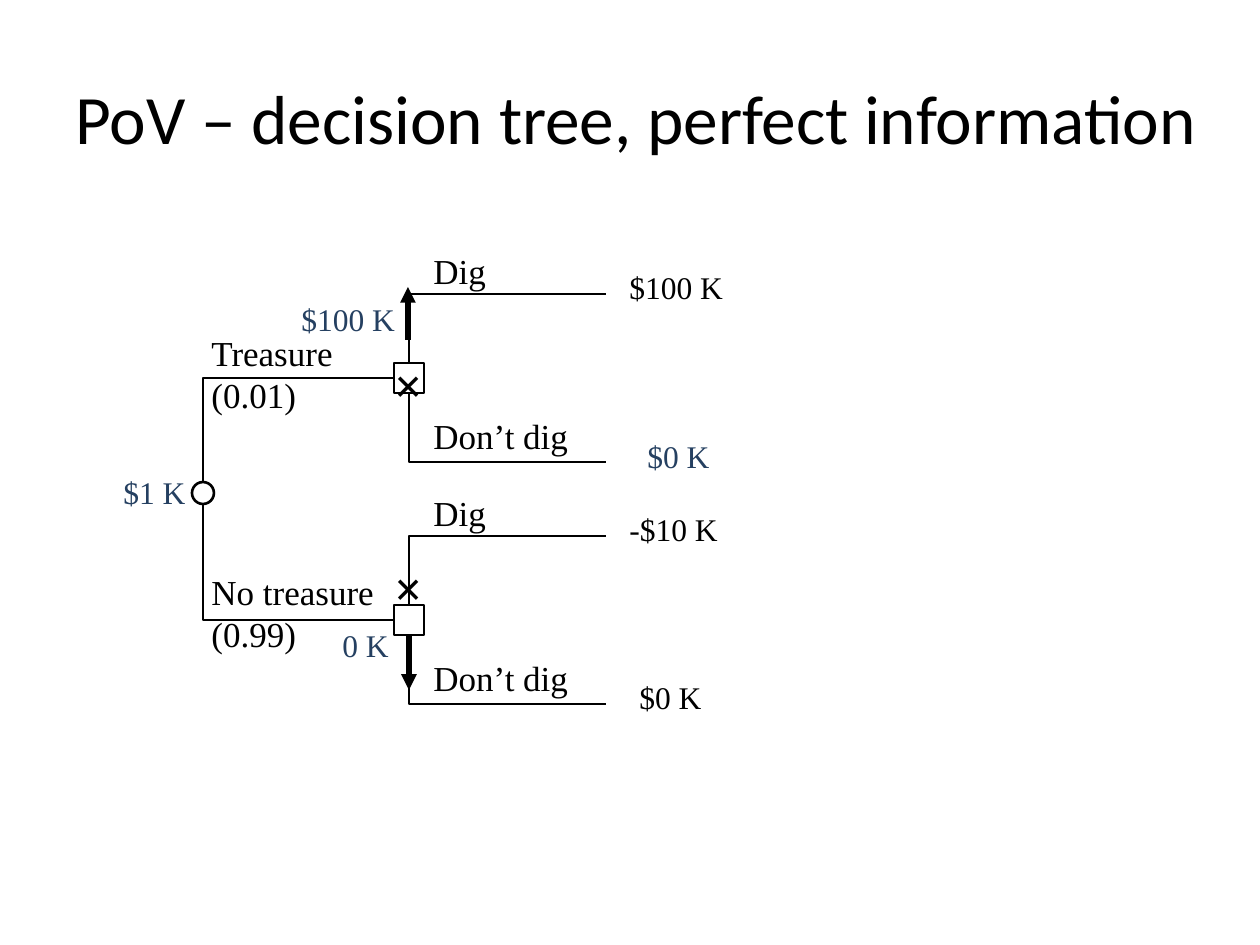
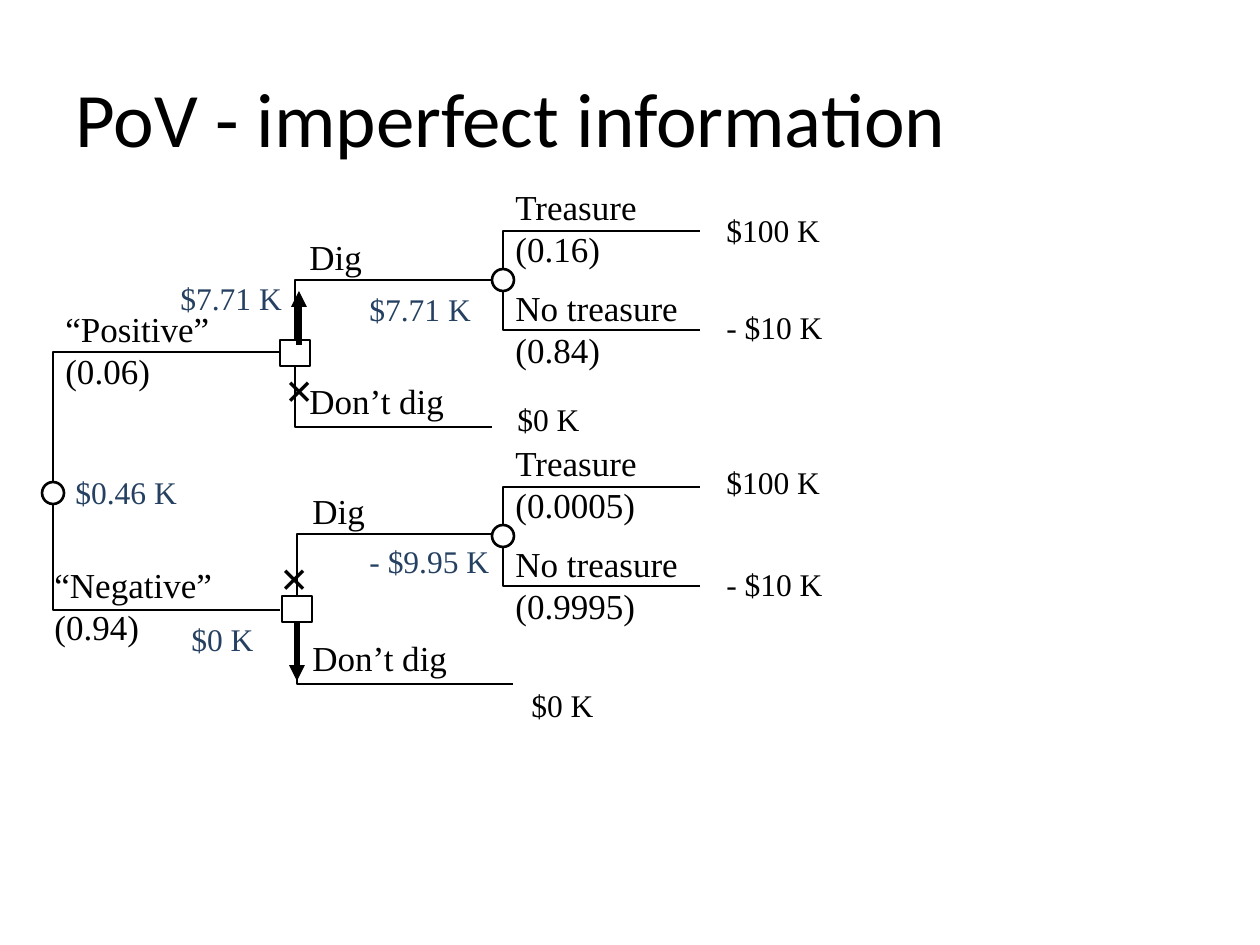
from dataclasses import dataclass
from typing import Optional

from lxml.etree import SubElement
from pptx import Presentation
from pptx.dml.color import RGBColor
from pptx.enum.shapes import MSO_CONNECTOR, MSO_SHAPE
from pptx.enum.text import MSO_ANCHOR, MSO_AUTO_SIZE, PP_ALIGN
from pptx.oxml.ns import qn
from pptx.util import Emu, Inches, Pt

BLACK = RGBColor(0x00, 0x00, 0x00)
WHITE = RGBColor(0xFF, 0xFF, 0xFF)
NAVY = RGBColor(0x25, 0x40, 0x61)
SERIF, SANS = "Times New Roman", "Calibri"
SQUARE, CIRCLE = MSO_SHAPE.RECTANGLE, MSO_SHAPE.OVAL
SCALE = Inches(1) / 126  # EMU in one px


@dataclass
class Fork:
    """Two branches leaving a node, each with its label."""
    spine: int
    tip: int
    top: int
    low: int
    names: tuple[str, str]
    size: tuple[int, int] = (22, 22)
    kind: MSO_SHAPE = CIRCLE
    mid: Optional[int] = None
    pads: tuple[int, int] = (0, 0)
    lifts: tuple[int, int] = (52, 50)
    widths: tuple[int, int] = (242, 212)


@dataclass
class Value:
    text: str
    x: int
    y: int
    width: int = 127
    color: RGBColor = BLACK


@dataclass
class Arrow:
    """Chosen branch; joined to the square of fork number `source` if given."""
    x: int
    start: int
    end: int
    source: Optional[int] = None


@dataclass
class Tree:
    title: str
    points: float
    forks: list[Fork]
    values: list[Value]
    arrows: list[Arrow]
    crosses: list[tuple[int, int]]


def px(count: float) -> Emu:
    return Emu(round(count * SCALE))


def choice(spine: int, tip: int, top: int, low: int, pad: int, height: int) -> Fork:
    """A decision between digging and not digging."""
    return Fork(spine, tip, top, low, ("Dig", "Don’t dig"), (30, height), SQUARE,
                pads=(pad, pad), lifts=(51, 54), widths=(242, 242))


def add_run(frame, text: str, points: float, color: RGBColor, font: str, bold: bool = False) -> None:
    run = frame.paragraphs[0].add_run()
    run.text = text
    run.font.name, run.font.size, run.font.bold = font, Pt(points), bold
    run.font.color.rgb = color


def add_text(slide, text: str, x: int, y: int, width: int, height: int, points: float,
             color: RGBColor = BLACK, bold: bool = False, wrap: bool = True) -> None:
    frame = slide.shapes.add_textbox(px(x), px(y), px(width), px(height)).text_frame
    frame.word_wrap = wrap
    frame.auto_size = MSO_AUTO_SIZE.SHAPE_TO_FIT_TEXT
    add_run(frame, text, points, color, SERIF, bold)


def ink(shape) -> None:
    shape.shadow.inherit = False
    shape.line.color.rgb = BLACK
    shape.line.width = Pt(1.5)


def add_fork(slide, fork: Fork):
    # Bracket
    pen = slide.shapes.build_freeform(fork.tip, fork.top, SCALE)
    pen.add_line_segments([(fork.spine, fork.top), (fork.spine, fork.low),
                           (fork.tip, fork.low)], close=False)
    lines = pen.convert_to_shape()
    lines.fill.background()
    ink(lines)
    # Node
    wide, high = fork.size
    mid = fork.mid or (fork.top + fork.low) // 2
    node = slide.shapes.add_shape(fork.kind, px(fork.spine - wide / 2), px(mid - high / 2),
                                  px(wide), px(high))
    node.fill.solid()
    node.fill.fore_color.rgb = WHITE
    ink(node)
    # Labels
    rows = zip(fork.names, (fork.top, fork.low), fork.pads, fork.lifts, fork.widths)
    for name, y, pad, lift, width in rows:
        height = 97 if "(" in name else 55
        add_text(slide, name, fork.spine + pad, y - lift, width, height, 20)
    return node


def add_arrow(slide, arrow: Arrow, nodes: list) -> None:
    line = slide.shapes.add_connector(MSO_CONNECTOR.STRAIGHT, px(arrow.x), px(arrow.start),
                                      px(arrow.x), px(arrow.end))
    if arrow.source is not None:
        line.begin_connect(nodes[arrow.source], 2)
    line.line.color.rgb = BLACK
    line.line.width = Pt(3)
    SubElement(line.line._get_or_add_ln(), qn("a:tailEnd"), type="triangle")
    SubElement(line._element.spPr, qn("a:effectLst"))


def add_title(slide, text: str, points: float) -> None:
    title = slide.shapes.title
    title.left, title.top, title.width, title.height = px(63), px(38), px(1182), px(158)
    frame = title.text_frame
    frame.vertical_anchor = MSO_ANCHOR.MIDDLE
    frame.paragraphs[0].alignment = PP_ALIGN.LEFT
    add_run(frame, text, points, BLACK, SANS)


def add_tree(deck, tree: Tree) -> None:
    slide = deck.slides.add_slide(deck.slide_layouts[5])
    add_title(slide, tree.title, tree.points)
    # Later forks lie behind the nodes of earlier ones only where they do not meet
    nodes = [add_fork(slide, fork) for fork in tree.forks]
    for value in tree.values:
        add_text(slide, value.text, value.x, value.y, value.width, 50, 18, value.color)
    for arrow in tree.arrows:
        add_arrow(slide, arrow, nodes)
    # Crosses mark the rejected branches
    for x, y in tree.crosses:
        add_text(slide, "×", x - 26, y - 39, 52, 72, 28, bold=True, wrap=False)


PERFECT = Tree(
    "PoV – decision tree, perfect information", 39.6,
    [Fork(203, 400, 378, 620, ("Treasure (0.01)", "No treasure (0.99)"), mid=493,
          pads=(-4, -4), lifts=(53, 56), widths=(150, 188)),
     choice(409, 606, 294, 462, 12, 30),
     choice(409, 606, 536, 704, 12, 30)],
    [Value("$100 K", 617, 262), Value("$0 K", 635, 431, 93, NAVY),
     Value("-$10 K", 617, 504), Value("$0 K", 627, 672, 108),
     Value("$100 K", 289, 294, 136, NAVY), Value("0 K", 330, 620, 84, NAVY),
     Value("$1 K", 111, 467, 100, NAVY)],
    [Arrow(408, 340, 287), Arrow(409, 635, 690, source=2)],
    [(408, 387), (408, 590)],
)

PARTIAL = Tree(
    "PoV - imperfect information", 44,
    [Fork(53, 280, 352, 610, ("“Positive” (0.06)", "“Negative” (0.94)"), mid=493,
          pads=(0, -11), lifts=(51, 53), widths=(179, 189)),
     choice(295, 492, 280, 427, 2, 26),
     choice(297, 513, 534, 684, 3, 26),
     Fork(503, 700, 231, 330, ("Treasure (0.16)", "No treasure (0.84)"), widths=(212, 212)),
     Fork(503, 700, 487, 586, ("Treasure (0.0005)", "No treasure (0.9995)"))],
    [Value("$100 K", 714, 205), Value("- $10 K", 714, 302),
     Value("$100 K", 714, 457), Value("- $10 K", 714, 559),
     Value("$0 K", 505, 394), Value("$0 K", 519, 680),
     Value("$7.71 K", 357, 284, 147, NAVY), Value("- $9.95 K", 357, 536, 158, NAVY),
     Value("$7.71 K", 168, 273, 142, NAVY), Value("$0 K", 179, 614, 105, NAVY),
     Value("$0.46 K", 63, 467, 147, NAVY)],
    [Arrow(299, 345, 291), Arrow(297, 622, 681, source=2)],
    [(299, 392), (294, 580)],
)


def main() -> None:
    deck = Presentation()
    deck.slide_width, deck.slide_height = px(1260), px(945)
    for tree in (PERFECT, PARTIAL):
        add_tree(deck, tree)
    deck.save("out.pptx")


if __name__ == "__main__":
    main()
